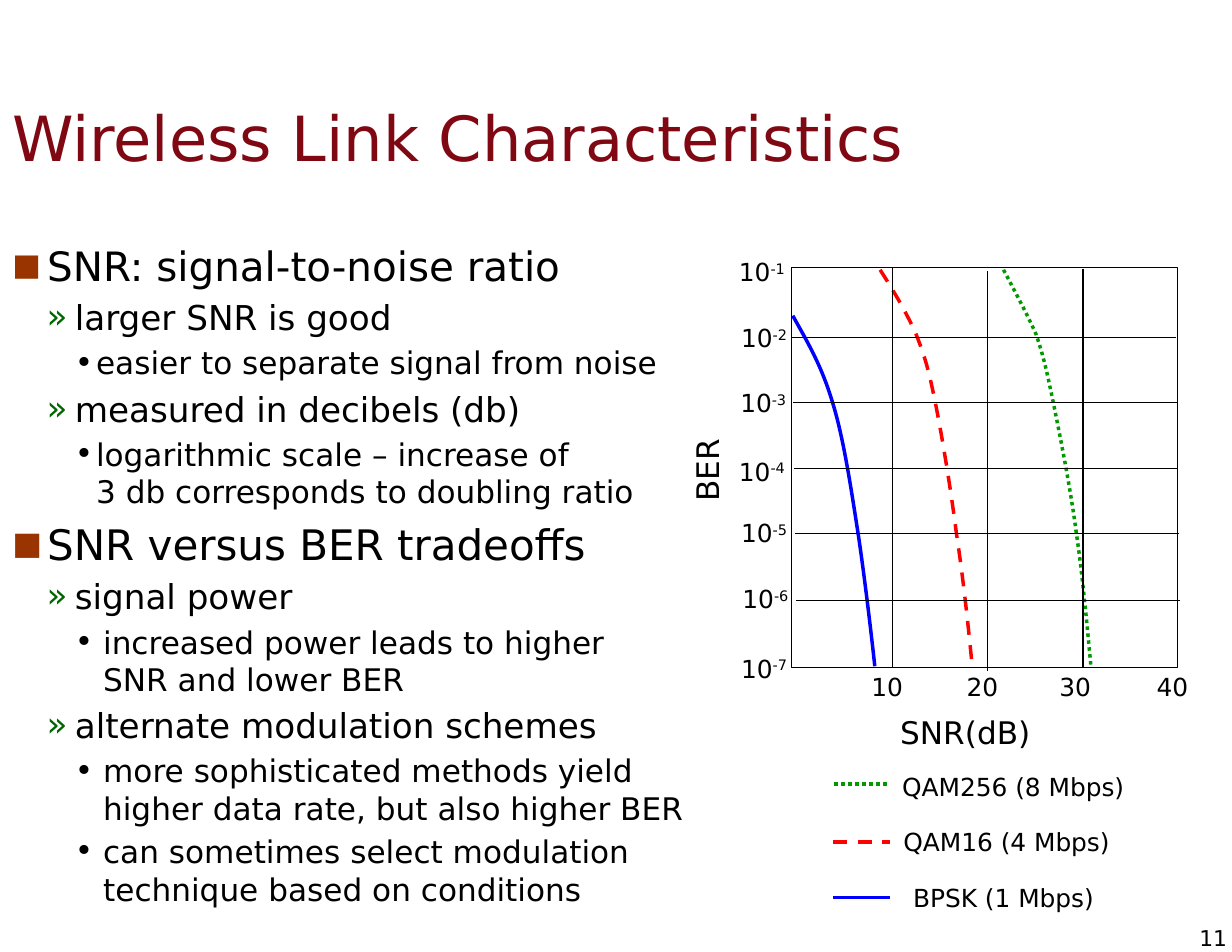
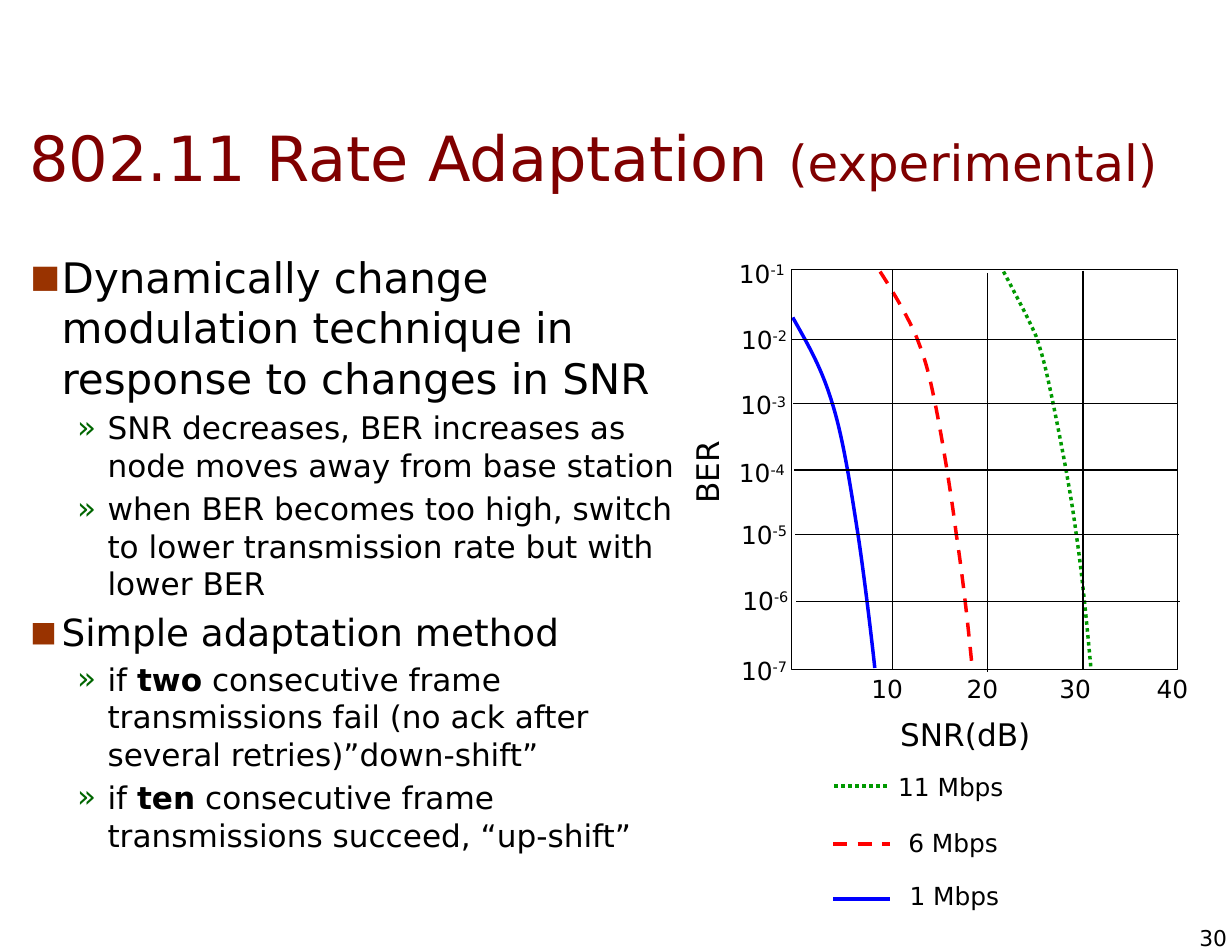
from dataclasses import dataclass
from typing import Any, Optional

from lxml.etree import SubElement
from pptx import Presentation
from pptx.dml.color import RGBColor
from pptx.enum.dml import MSO_LINE_DASH_STYLE as Dash
from pptx.enum.shapes import MSO_CONNECTOR as Link, MSO_SHAPE as Shape
from pptx.enum.text import MSO_ANCHOR as Anchor, MSO_AUTO_SIZE as Fit, PP_ALIGN as Align
from pptx.oxml.ns import qn
from pptx.util import Cm, Pt

FONT = "DejaVu Sans"
BLACK = RGBColor(0x00, 0x00, 0x00)
WINE = RGBColor(0x7F, 0x08, 0x13)
MAROON = RGBColor(0x80, 0x00, 0x00)
RUST = RGBColor(0x99, 0x33, 0x00)
FOREST = RGBColor(0x00, 0x66, 0x00)
BLUE = RGBColor(0x00, 0x00, 0xFF)
RED = RGBColor(0xFF, 0x00, 0x00)
GREEN = RGBColor(0x00, 0x99, 0x00)


@dataclass(frozen=True)
class Run:
    text: str
    size: float
    color: RGBColor = BLACK
    bold: bool = False
    base: int = 0


@dataclass(frozen=True)
class Mark:
    char: str
    left: float
    hang: float
    color: Optional[RGBColor] = None
    scale: int = 100


@dataclass(frozen=True)
class Item:
    mark: Mark
    runs: tuple[Run, ...]


@dataclass(frozen=True)
class Box:
    left: float
    top: float
    width: float
    height: float = 0.97


@dataclass(frozen=True)
class Curve:
    color: RGBColor
    dash: Optional[Dash]
    points: tuple[tuple[float, float], ...]
    key: tuple[float, float, float]


@dataclass(frozen=True)
class Label:
    text: str
    box: Box


@dataclass(frozen=True)
class Page:
    title: tuple[Run, ...]
    head: Box
    body: Box
    items: tuple[Item, ...]
    shift: float
    labels: tuple[Label, ...]
    number: str


CURVES = (
    Curve(BLUE, None, (
        (17.98, 7.16), (18.29, 7.72), (18.62, 8.26), (18.87, 9.09),
        (19.13, 9.91), (19.3, 11.07), (19.46, 12.09),
        (19.61, 13.08), (19.79, 14.63), (19.84, 15.11)), (18.9, 20.19, 20.35)),
    Curve(RED, Dash.DASH, (
        (19.96, 6.12), (20.27, 6.6), (20.57, 7.11), (20.78, 7.59),
        (20.98, 8.1), (21.06, 8.38), (21.21, 9.12),
        (21.36, 9.86), (21.56, 11.07), (21.69, 12.09),
        (21.84, 13.08), (21.95, 14.1), (22.05, 15.11)), (18.9, 20.19, 19.1)),
    Curve(GREEN, Dash.ROUND_DOT, (
        (22.76, 6.12), (23.01, 6.6), (23.29, 7.11), (23.5, 7.59),
        (23.67, 8.1), (23.72, 8.33), (23.88, 9.09),
        (24.03, 9.83), (24.28, 11.07), (24.41, 12.09),
        (24.56, 13.08), (24.69, 14.58), (24.74, 15.09)), (18.92, 20.12, 17.78)),
)
ROWS = (7.65, 9.12, 10.62, 12.09, 13.61)
COLS = ((20.24, 6.07), (22.4, 6.15), (24.56, 6.1))
SNRS = (19.46, 21.62, 23.72, 25.93)
BERS = ((16.38, 5.66), (16.43, 7.16), (16.41, 8.64), (16.38, 10.19),
        (16.43, 11.58), (16.46, 13.08), (16.43, 14.66))


def write(para: Any, runs: tuple[Run, ...]) -> None:
    """Add each run, with a line break at each newline."""
    for run in runs:
        for num, line in enumerate(run.text.split("\n")):
            if num:
                para.add_line_break()
            part = para.add_run()
            part.text = line
            font = part.font
            font.name, font.size, font.bold = FONT, Pt(run.size), run.bold
            font.color.rgb = run.color
            if run.base:
                part._r.get_or_add_rPr().set("baseline", str(run.base * 1000))


def frame(shapes: Any, box: Box, wrap: bool = True, pad: bool = True) -> Any:
    """Add a text box and return the shape."""
    shape = shapes.add_textbox(Cm(box.left), Cm(box.top), Cm(box.width), Cm(box.height))
    text = shape.text_frame
    text.word_wrap = wrap
    text.margin_left = text.margin_right = Cm(0.28 if pad else 0)
    text.margin_top = text.margin_bottom = Cm(0.16 if pad else 0)
    return shape


def label(shapes: Any, box: Box, *runs: Run, pad: bool = True) -> Any:
    """Add a right-aligned label on one line."""
    shape = frame(shapes, box, False, pad)
    shape.text_frame.auto_size = Fit.SHAPE_TO_FIT_TEXT
    para = shape.text_frame.paragraphs[0]
    para.alignment = Align.RIGHT
    write(para, runs)
    return shape


def bullet(para: Any, mark: Mark) -> None:
    """Give a paragraph its hanging bullet."""
    props = para._p.get_or_add_pPr()
    props.set("marL", str(Cm(mark.left)))
    props.set("indent", str(-Cm(mark.hang)))
    if mark.color is not None:
        tint = SubElement(props, qn("a:buClr"))
        SubElement(tint, qn("a:srgbClr")).set("val", str(mark.color))
    if mark.scale != 100:
        SubElement(props, qn("a:buSzPct")).set("val", str(mark.scale * 1000))
    SubElement(props, qn("a:buFont")).set("typeface", FONT)
    SubElement(props, qn("a:buChar")).set("char", mark.char)


def outline(text: Any, items: tuple[Item, ...]) -> None:
    """Write the bulleted items."""
    for num, item in enumerate(items):
        para = text.add_paragraph() if num else text.paragraphs[0]
        bullet(para, item.mark)
        if num:
            para.space_before = Pt(0.2 * item.runs[0].size)
        write(para, item.runs)


def pen(line: Any, color: RGBColor, width: float, dash: Optional[Dash] = None) -> None:
    """Set the colour, width and dash of a line."""
    line.color.rgb, line.width = color, Pt(width)
    if dash is not None:
        line.dash_style = dash


def rule(shapes: Any, x1: float, y1: float, x2: float, y2: float,
         color: RGBColor = BLACK, width: float = 0.75, dash: Optional[Dash] = None) -> None:
    """Draw a straight line."""
    line = shapes.add_connector(Link.STRAIGHT, Cm(x1), Cm(y1), Cm(x2), Cm(y2))
    pen(line.line, color, width, dash)
    SubElement(line._element.spPr, qn("a:effectLst"))


def bend(shape: Any) -> None:
    """Turn each three straight segments into one cubic curve."""
    track = next(shape._element.iter(qn("a:path")))
    lines = track.findall(qn("a:lnTo"))
    for first in range(0, len(lines), 3):
        cubic = SubElement(track, qn("a:cubicBezTo"))
        for line in lines[first:first + 3]:
            cubic.append(line[0])
            track.remove(line)


def sweep(shapes: Any, curve: Curve, shift: float) -> None:
    """Draw one curve."""
    knots = [(Cm(x), Cm(y + shift)) for x, y in curve.points]
    pencil = shapes.build_freeform(*knots[0])
    pencil.add_line_segments(knots[1:], close=False)
    shape = pencil.convert_to_shape()
    bend(shape)
    shape.shadow.inherit = False
    shape.fill.background()
    pen(shape.line, curve.color, 2.25, curve.dash)


def plot(shapes: Any, shift: float, labels: tuple[Label, ...]) -> None:
    """Draw the error rate plot with grid, ticks and legend."""
    for curve in CURVES:
        sweep(shapes, curve, shift)
    edge = shapes.add_shape(Shape.RECTANGLE, Cm(17.96), Cm(6.07 + shift), Cm(8.74), Cm(9.07))
    edge.shadow.inherit = False
    edge.fill.background()
    pen(edge.line, BLACK, 0.75)
    for row, y in enumerate(ROWS):
        x = 17.96 + 0.025 * row
        rule(shapes, x, y + shift, x + 8.71, y + shift)
    for x, y in COLS:
        rule(shapes, x, y + shift, x, y + shift + 9.06)
    for num, x in enumerate(SNRS, 1):
        label(shapes, Box(x, 15.08 + shift, 1.3), Run(str(10 * num), 16))
    for curve in CURVES:
        left, right, y = curve.key
        rule(shapes, left, y + shift, right, y + shift, curve.color, 2.25, curve.dash)
    for item in labels:
        label(shapes, item.box, Run(item.text, 16))
    label(shapes, Box(19.99, 16.03 + shift, 3.66, 1.14), Run("SNR(dB)", 20))
    label(shapes, Box(15.01, 10.11 + shift, 2.01, 1.14), Run("BER", 20)).rotation = 270
    for num, (x, y) in enumerate(BERS, 1):
        label(shapes, Box(x, y + shift, 1.7), Run("10", 16), Run(f"-{num}", 16, base=30))


def build(deck: Any, page: Page) -> None:
    """Add one slide."""
    shapes = deck.slides.add_slide(deck.slide_layouts[6]).shapes
    head = frame(shapes, page.head).text_frame
    head.vertical_anchor = Anchor.MIDDLE
    write(head.paragraphs[0], page.title)
    outline(frame(shapes, page.body).text_frame, page.items)
    plot(shapes.add_group_shape().shapes, page.shift, page.labels)
    foot = label(shapes, Box(26.97, 20.96, 0.86, 0.61), Run(page.number, 14), pad=False)
    foot.text_frame.vertical_anchor = Anchor.MIDDLE


def point(mark: Mark, size: float, *texts: str) -> Item:
    """Make an item whose every second text is bold."""
    return Item(mark, tuple(Run(text, size, bold=num % 2 == 1) for num, text in enumerate(texts)))


TOP = Mark("■", 0.79, 0.79, RUST, 75)
SUB = Mark("»", 1.42, 0.64, FOREST)
DOT = Mark("•", 1.9, 0.48)
FAR = Mark("•", 2.06, 0.64)
MAIN = Mark("■", 1.07, 0.71, RUST, 75)
NEXT = Mark("»", 2.11, 0.69, FOREST)

PAGES = (
    Page(
        (Run("Wireless Link Characteristics", 40, WINE),),
        Box(0, 1.3, 23.75, 3.61), Box(0, 5.31, 16.1, 15.6),
        (
            point(TOP, 26, "SNR: signal-to-noise ratio"),
            point(SUB, 22, "larger SNR is good"),
            point(DOT, 20, "easier to separate signal from noise"),
            point(SUB, 22, "measured in decibels (db)"),
            point(DOT, 20, "logarithmic scale – increase of \n3 db corresponds to doubling ratio"),
            point(TOP, 27, "SNR versus BER tradeoffs"),
            point(SUB, 22, "signal power"),
            point(FAR, 20, "increased power leads to higher \nSNR and lower BER"),
            point(SUB, 22, "alternate modulation schemes"),
            point(FAR, 20, "more sophisticated methods yield higher data rate, but also higher BER"),
            point(FAR, 20, "can sometimes select modulation technique based on conditions"),
        ),
        0,
        (Label("QAM256 (8 Mbps)", Box(20.04, 17.35, 5.74)),
         Label("QAM16 (4 Mbps)", Box(20.07, 18.59, 5.38)),
         Label("BPSK (1 Mbps)", Box(20.24, 19.86, 4.85))),
        "11"),
    Page(
        (Run("802.11 Rate Adaptation ", 40, MAROON), Run("(experimental)", 32, MAROON)),
        Box(0.38, 2.24, 27.18, 2.64), Box(0.05, 5.54, 15.65, 16),
        (
            point(MAIN, 27, "Dynamically change modulation technique in response to changes in SNR"),
            point(NEXT, 20, "SNR decreases, BER increases as node moves away from base station"),
            point(NEXT, 20, "when BER becomes too high, switch to lower transmission rate but with lower BER"),
            point(MAIN, 24, "Simple adaptation method"),
            point(NEXT, 20, "if ", "two",
                  " consecutive frame transmissions fail (no ack after several retries)”down-shift”"),
            point(NEXT, 20, "if ", "ten", " consecutive frame transmissions succeed, “up-shift”"),
        ),
        0.04,
        (Label("11 Mbps", Box(20.07, 17.35, 2.97)),
         Label("6 Mbps", Box(20.29, 18.62, 2.62)),
         Label("1 Mbps", Box(20.32, 19.81, 2.62))),
        "30"),
)


def main() -> None:
    """Build and save the deck."""
    deck = Presentation()
    deck.slide_width, deck.slide_height = Cm(27.94), Cm(21.59)
    for page in PAGES:
        build(deck, page)
    deck.save("out.pptx")


if __name__ == "__main__":
    main()
